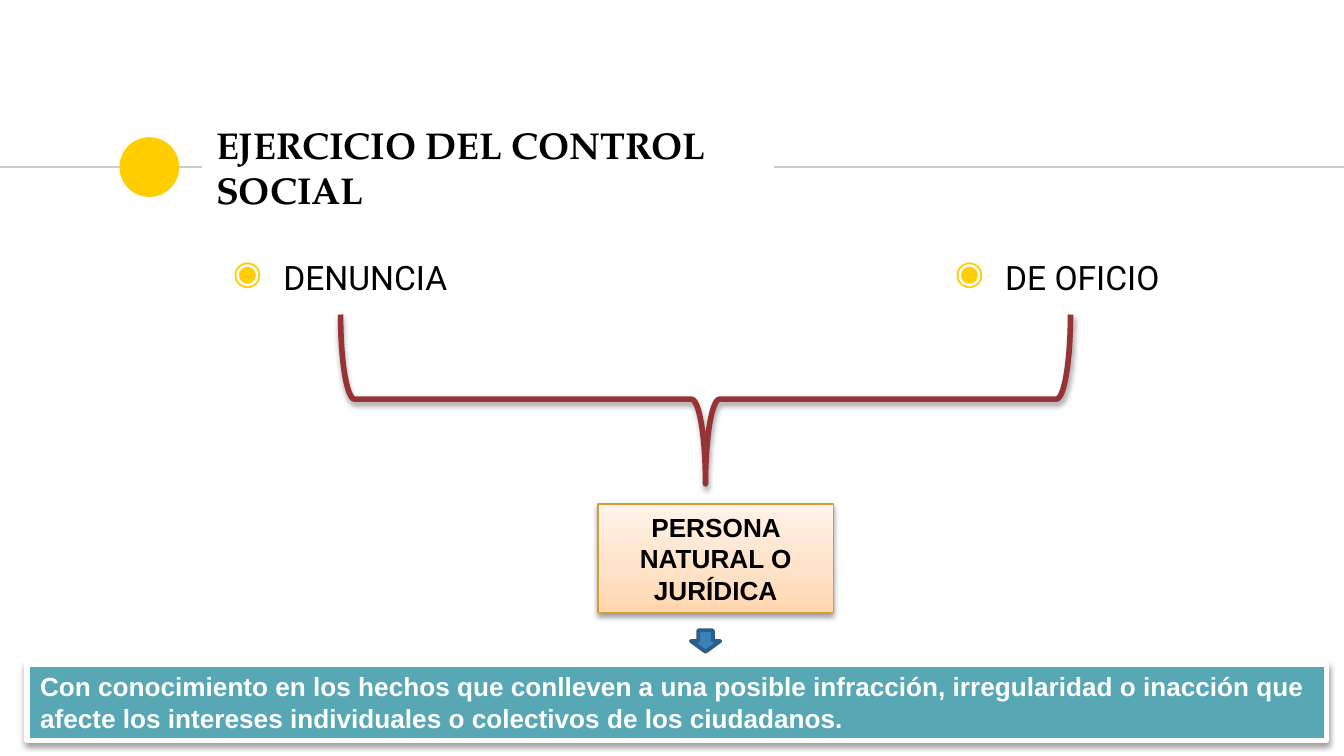
from copy import deepcopy

from lxml.etree import SubElement
from pptx import Presentation
from pptx.dml.color import RGBColor
from pptx.enum.shapes import MSO_CONNECTOR, MSO_SHAPE
from pptx.enum.text import MSO_ANCHOR, MSO_AUTO_SIZE, PP_ALIGN
from pptx.oxml.ns import qn
from pptx.util import Pt

COLORS = {
    "rule": "CCCCCC", "accent": "FFCD00", "black": "000000", "white": "FFFFFF",
    "brace": "963334", "person_edge": "D79D34", "banner": "57A7B5",
    "arrow": "3A81BA", "arrow_edge": "2B5F8A",
}
PERSON_GRADIENT = [(0, "FFD6AD"), (0.35, "FFE1C5"), (1, "FFF3E9")]
TITLE_FONT = {"name": "TeX Gyre Pagella", "size": Pt(20), "bold": True}
OPTION_FONT = {"name": "Roboto", "size": Pt(18)}
BOX_FONT = {"name": "Arial", "size": Pt(14), "bold": True}


def rgb(name):
    return RGBColor.from_string(COLORS[name])


def points(box):
    return [Pt(value) for value in box]


def write(frame, text, font_format, color):
    frame.word_wrap = True
    paragraph = frame.paragraphs[0]
    run = paragraph.add_run()
    run.text = text
    for attribute, value in font_format.items():
        setattr(run.font, attribute, value)
    run.font.color.rgb = rgb(color)
    return paragraph


def add_text(slide, box, text, font_format):
    frame = slide.shapes.add_textbox(*points(box)).text_frame
    for side in ("left", "top", "right", "bottom"):
        setattr(frame, f"margin_{side}", Pt(7.2))
    return frame, write(frame, text, font_format, "black")


def add_figure(slide, kind, box, fill=None, edge=None, width=0):
    figure = slide.shapes.add_shape(kind, *points(box))
    figure.shadow.inherit = False
    if fill:
        figure.fill.solid()
        figure.fill.fore_color.rgb = rgb(fill)
    else:
        figure.fill.background()
    if edge:
        figure.line.color.rgb = rgb(edge)
        figure.line.width = Pt(width)
    else:
        figure.line.fill.background()
    return figure


def add_shadow(figure, opacity, distance):
    effects = figure._element.spPr.find(qn("a:effectLst"))
    shadow = SubElement(effects, qn("a:outerShdw"), blurRad=str(Pt(3.1)),
                        dist=str(Pt(distance)), dir="5400000", rotWithShape="0")
    color = SubElement(shadow, qn("a:srgbClr"), val=COLORS["black"])
    SubElement(color, qn("a:alpha"), val=str(opacity * 1000))


def add_rule(slide, start, end, y):
    rule = slide.shapes.add_connector(MSO_CONNECTOR.STRAIGHT, *points((start, y, end, y)))
    rule.line.color.rgb = rgb("rule")
    rule.line.width = Pt(0.75)
    SubElement(rule._element.spPr, qn("a:effectLst"))


def add_header(slide, box, title):
    left, top, width, height = box
    middle = top + height / 2
    dot = 32
    add_rule(slide, left, left + 108, middle)
    add_figure(slide, MSO_SHAPE.OVAL, (left + 64, middle - dot / 2, dot, dot), "accent")
    add_rule(slide, left + 414.7, left + width, middle)
    frame, _ = add_text(slide, (left + 108.7, top, 285.1, height), title, TITLE_FONT)
    frame.vertical_anchor = MSO_ANCHOR.MIDDLE


def add_option(slide, box, text):
    _, paragraph = add_text(slide, box, text, OPTION_FONT)
    paragraph.space_before = Pt(6)
    properties = paragraph._p.get_or_add_pPr()
    properties.set("marL", str(Pt(36)))
    properties.set("indent", str(Pt(-27)))
    bullet_color = SubElement(properties, qn("a:buClr"))
    SubElement(bullet_color, qn("a:srgbClr"), val=COLORS["accent"])
    SubElement(properties, qn("a:buChar"), char="◉")


def add_brace(slide, box):
    """Turn a left brace so that it fills the box and points down."""
    left, top, width, height = box
    upright = (left + (width - height) / 2, top + (height - width) / 2, height, width)
    brace = add_figure(slide, MSO_SHAPE.LEFT_BRACE, upright, edge="brace", width=3)
    brace.rotation = 270
    add_shadow(brace, 35, 1.8)


def fill_gradient(figure, stops):
    """Shade the figure from bottom to top."""
    figure.fill.gradient()
    figure.fill.gradient_angle = 90
    stop_list = figure._element.spPr.find(qn("a:gradFill")).find(qn("a:gsLst"))
    while len(stop_list) < len(stops):
        stop_list.append(deepcopy(stop_list[0]))
    for stop, (position, color) in zip(figure.fill.gradient_stops, stops):
        stop.position = position
        stop.color.rgb = RGBColor.from_string(color)


def add_box(slide, box, text, text_color, align, fill, edge, width):
    figure = add_figure(slide, MSO_SHAPE.RECTANGLE, box, fill, edge, width)
    add_shadow(figure, 38, 1.6)
    write(figure.text_frame, text, BOX_FONT, text_color).alignment = align
    figure.text_frame.auto_size = MSO_AUTO_SIZE.SHAPE_TO_FIT_TEXT
    return figure


def add_conclusion(slide, box):
    left, top, width, height = box
    person = add_box(slide, (left + 306, top, 126, 58.3), "PERSONA NATURAL O JURÍDICA",
                     "black", PP_ALIGN.CENTER, None, "person_edge", 0.75)
    fill_gradient(person, PERSON_GRADIENT)
    banner_height = 41
    add_box(slide, (left, top + height - banner_height, width, banner_height),
            "Con conocimiento en los hechos que conlleven a una posible infracción, "
            "irregularidad o inacción que afecte los intereses individuales o "
            "colectivos de los ciudadanos.",
            "white", PP_ALIGN.LEFT, "banner", "white", 3)
    add_figure(slide, MSO_SHAPE.DOWN_ARROW, (left + 355.7, top + 67.7, 15.8, 11.5),
               "arrow", "arrow_edge", 2)


def main():
    presentation = Presentation()
    presentation.slide_width, presentation.slide_height = Pt(720), Pt(405)
    slide = presentation.slides.add_slide(presentation.slide_layouts[6])
    add_header(slide, (0, 72.2, 720, 34.6), "EJERCICIO DEL CONTROL SOCIAL")
    for left, option in ((108.7, "DENUNCIA"), (495.4, "DE OFICIO")):
        add_option(slide, (left, 130.3, 183.6, 245.5), option)
    add_brace(slide, (182.5, 168.5, 391, 90.7))
    add_conclusion(slide, (14.4, 270, 696.2, 126.7))
    presentation.save("out.pptx")


if __name__ == "__main__":
    main()
